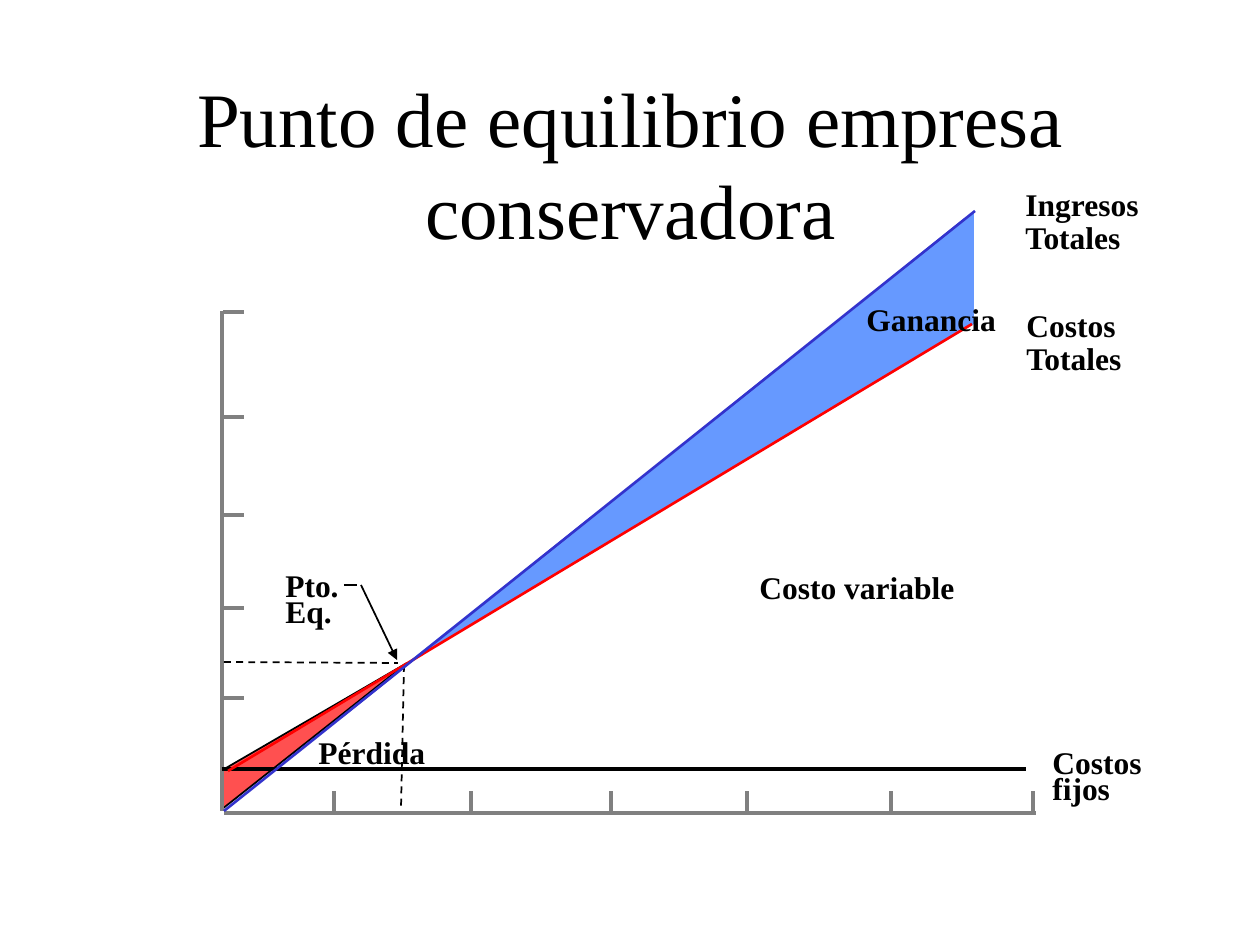
from dataclasses import dataclass
from typing import Optional

from lxml.etree import SubElement
from pptx import Presentation
from pptx.dml.color import RGBColor
from pptx.enum.dml import MSO_LINE
from pptx.enum.shapes import MSO_CONNECTOR
from pptx.enum.text import MSO_ANCHOR, PP_ALIGN
from pptx.oxml.ns import qn
from pptx.util import Emu, Pt

EMU_PER_PX = 914400 / 126


@dataclass(frozen=True)
class Theme:
    font: str = "Times New Roman"
    title_size: int = 44
    label_size: int = 18
    label_spacing: float = 0.7
    label_space_before: float = 3.6
    text: str = "000000"
    axis: str = "808080"
    income: str = "3333CC"
    cost: str = "FF0000"
    loss: str = "FF5050"
    profit: str = "6699FF"


THEME = Theme()


@dataclass(frozen=True)
class Line:
    start: tuple[int, int]
    end: tuple[int, int]
    color: str = THEME.text
    width: float = 1
    dashed: bool = False
    arrow: bool = False


@dataclass(frozen=True)
class Label:
    left: int
    top: int
    width: int
    height: int
    paragraphs: tuple[str, ...]
    wrap: bool = True


@dataclass(frozen=True)
class Area:
    points: tuple[tuple[int, int], ...]
    fill: str
    outline: Optional[str] = None


def px(length: int) -> Emu:
    return Emu(round(length * EMU_PER_PX))


def add_run(paragraph, text: str, size: int, bold: bool = False) -> None:
    run = paragraph.add_run()
    run.text = text
    run.font.name = THEME.font
    run.font.size = Pt(size)
    run.font.bold = bold
    run.font.color.rgb = RGBColor.from_string(THEME.text)


def add_title(slide, text: str) -> None:
    shape = slide.shapes.add_textbox(px(95), px(84), px(1071), px(158))
    frame = shape.text_frame
    frame.word_wrap = True
    frame.vertical_anchor = MSO_ANCHOR.MIDDLE
    paragraph = frame.paragraphs[0]
    paragraph.alignment = PP_ALIGN.CENTER
    add_run(paragraph, text, THEME.title_size)


def add_area(slide, area: Area) -> None:
    builder = slide.shapes.build_freeform(*area.points[0], scale=EMU_PER_PX)
    builder.add_line_segments(area.points[1:], close=True)
    shape = builder.convert_to_shape()
    shape.shadow.inherit = False
    shape.fill.solid()
    shape.fill.fore_color.rgb = RGBColor.from_string(area.fill)
    if area.outline:
        shape.line.color.rgb = RGBColor.from_string(area.outline)
        shape.line.width = Pt(1)
    else:
        shape.line.fill.background()


def add_line(slide, line: Line) -> None:
    connector = slide.shapes.add_connector(
        MSO_CONNECTOR.STRAIGHT, *map(px, line.start + line.end))
    connector.line.color.rgb = RGBColor.from_string(line.color)
    connector.line.width = Pt(line.width)
    if line.dashed:
        connector.line.dash_style = MSO_LINE.DASH
    properties = connector._element.spPr
    if line.arrow:
        SubElement(properties.find(qn("a:ln")), qn("a:tailEnd"), type="triangle")
    SubElement(properties, qn("a:effectLst"))


def add_label(slide, label: Label) -> None:
    shape = slide.shapes.add_textbox(
        px(label.left), px(label.top), px(label.width), px(label.height))
    frame = shape.text_frame
    frame.word_wrap = label.wrap
    for index, text in enumerate(label.paragraphs):
        paragraph = frame.add_paragraph() if index else frame.paragraphs[0]
        paragraph.line_spacing = THEME.label_spacing
        paragraph.space_before = Pt(THEME.label_space_before)
        add_run(paragraph, text, THEME.label_size, bold=True)


# Loss and profit areas meet at the break-even point
BREAK_EVEN = (407, 663)
AREAS = (
    Area(((221, 810), (221, 771), BREAK_EVEN), THEME.loss, THEME.text),
    Area((BREAK_EVEN, (974, 213), (974, 324)), THEME.profit),
)

# Axes, fixed costs, break-even guides, total costs and total income
CHART_LINES = (
    Line((222, 311), (222, 811), THEME.axis, 2),
    Line((224, 813), (1036, 813), THEME.axis, 2),
    Line((222, 769), (1026, 769), width=2),
    Line((224, 662), (398, 663), dashed=True),
    Line((404, 665), (401, 810), dashed=True),
    Line((228, 771), (972, 324), THEME.cost, 1.5),
    Line((224, 811), (975, 211), THEME.income, 1.5),
)

# Callout to the break-even point
CALLOUT_LINES = (
    Line((344, 585), (357, 585)),
    Line((361, 585), (397, 660), arrow=True),
)

# Axis ticks
TICK = 21
VERTICAL_TICKS = (312, 417, 515, 608, 698)
HORIZONTAL_TICKS = (334, 471, 611, 747, 891, 1033)
TICK_LINES = tuple(
    Line((223, y), (223 + TICK, y), THEME.axis, 2) for y in VERTICAL_TICKS
) + tuple(
    Line((x, 812), (x, 812 - TICK), THEME.axis, 2) for x in HORIZONTAL_TICKS
)

LABELS = (
    Label(1013, 189, 205, 73, ("Ingresos", "Totales")),
    Label(1014, 310, 154, 73, ("Costos", "Totales")),
    Label(747, 572, 221, 77, ("Costo variable",), wrap=False),
    Label(1040, 747, 139, 66, ("Costos fijos",)),
    Label(854, 304, 155, 39, ("Ganancia",), wrap=False),
    Label(273, 570, 87, 66, ("Pto.Eq.",)),
    Label(306, 737, 146, 39, ("Pérdida",)),
)


def main() -> None:
    presentation = Presentation()
    presentation.slide_width = px(1260)
    presentation.slide_height = px(945)
    slide = presentation.slides.add_slide(presentation.slide_layouts[6])

    add_title(slide, "Punto de equilibrio empresa conservadora")
    for area in AREAS:
        add_area(slide, area)
    for line in CHART_LINES:
        add_line(slide, line)
    for label in LABELS:
        add_label(slide, label)
    for line in CALLOUT_LINES + TICK_LINES:
        add_line(slide, line)

    presentation.save("out.pptx")


if __name__ == "__main__":
    main()
